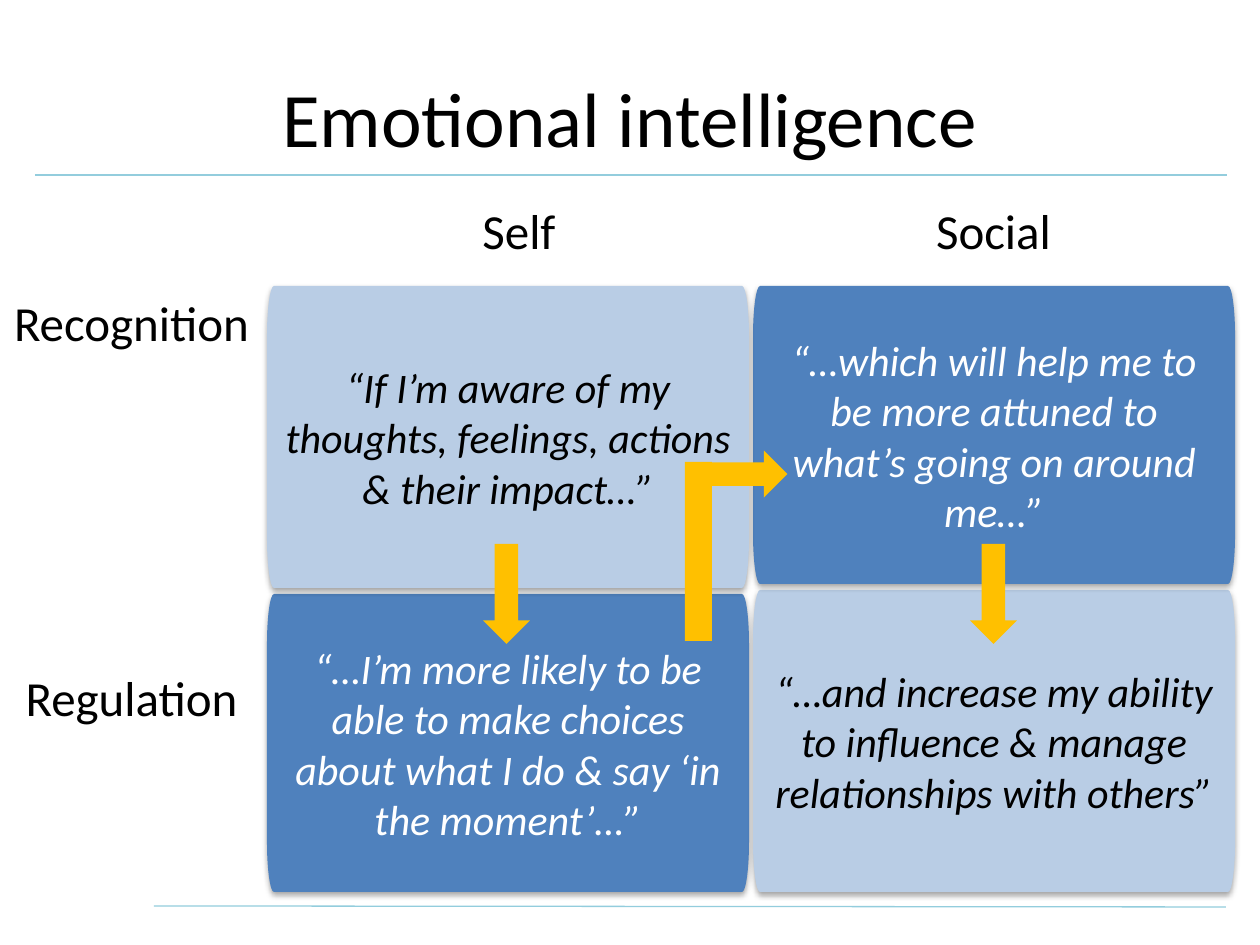
from lxml.etree import SubElement
from pptx import Presentation
from pptx.dml.color import RGBColor
from pptx.enum.shapes import MSO_CONNECTOR, MSO_SHAPE
from pptx.enum.text import MSO_ANCHOR, MSO_AUTO_SIZE, PP_ALIGN
from pptx.oxml.ns import qn
from pptx.util import Emu, Pt

SLIDE_W, SLIDE_H = 1260, 945
DARK, LIGHT, GOLD, RULE = "4F81BD", "B9CDE5", "FFC000", "93CDDD"
BLACK, WHITE = "000000", "FFFFFF"
CORNER_W, CORNER_H, BEND = 7, 50, 0.45
CELL_W = 482


def px(length):
    return Emu(round(length * 914400 / 126))


def color(value):
    return RGBColor.from_string(value)


def paint(shape, fill):
    shape.shadow.inherit = False
    shape.fill.solid()
    shape.fill.fore_color.rgb = color(fill)
    shape.line.fill.background()


def write(shape, text, size, ink, italic=False):
    frame = shape.text_frame
    frame.text = text
    frame.vertical_anchor = MSO_ANCHOR.MIDDLE
    paragraph = frame.paragraphs[0]
    paragraph.alignment = PP_ALIGN.CENTER
    font = paragraph.runs[0].font
    font.name = "Calibri"
    font.size = Pt(size)
    font.italic = italic
    font.color.rgb = color(ink)
    return frame


def add_block(slide, preset, box, fill):
    block = slide.shapes.add_shape(preset, *map(px, box))
    paint(block, fill)
    return block


def add_rule(slide, x1, y1, x2, y2):
    rule = slide.shapes.add_connector(MSO_CONNECTOR.STRAIGHT, *map(px, (x1, y1, x2, y2)))
    rule.line.color.rgb = color(RULE)
    rule.line.width = Pt(0.75)
    SubElement(rule._element.spPr, qn("a:effectLst"))


def add_title(slide, box, text):
    title = slide.shapes.title
    title.left, title.top, title.width, title.height = map(px, box)
    write(title, text, 44, BLACK)


def add_label(slide, box, text):
    label = add_block(slide, MSO_SHAPE.RECTANGLE, box, WHITE)
    frame = write(label, text, 28, BLACK)
    frame.vertical_anchor = MSO_ANCHOR.TOP
    frame.word_wrap = False
    frame.auto_size = MSO_AUTO_SIZE.SHAPE_TO_FIT_TEXT


def cell_outline(left, top, width, height):
    right, bottom = left + width, top + height
    corners = [(left, top, 1, 1), (right, top, -1, 1),
               (right, bottom, -1, -1), (left, bottom, 1, -1)]
    points = []
    for index, (x, y, inward_x, inward_y) in enumerate(corners):
        dx, dy = inward_x * CORNER_W, inward_y * CORNER_H
        curve = [(x, y + dy), (x, y + dy * BEND), (x + dx * BEND, y), (x + dx, y)]
        points += curve[::-1] if index % 2 else curve
    return [(px(x), px(y)) for x, y in points]


def bend_corners(shape):
    lines = list(shape._element.spPr.iter(qn("a:lnTo")))
    for first in range(0, len(lines), 4):
        corner = lines[first:first + 3]
        corner[0].tag = qn("a:cubicBezTo")
        for line in corner[1:]:
            corner[0].append(line[0])
            line.getparent().remove(line)


def add_soft_shadow(shape):
    effects = shape._element.spPr.find(qn("a:effectLst"))
    shadow = SubElement(effects, qn("a:outerShdw"), blurRad="40000", dist="23000",
                        dir="5400000", rotWithShape="0")
    tint = SubElement(shadow, qn("a:srgbClr"), val=BLACK)
    SubElement(tint, qn("a:alpha"), val="35000")


def add_cell(slide, box, text, fill, ink, space_after):
    start, *rest = cell_outline(*box)
    builder = slide.shapes.build_freeform(*start)
    builder.add_line_segments(rest, close=True)
    cell = builder.convert_to_shape()
    bend_corners(cell)
    paint(cell, fill)
    add_soft_shadow(cell)
    frame = write(cell, text, 24, ink, italic=True)
    frame.word_wrap = True
    frame.margin_left = frame.margin_right = px(17)
    frame.margin_top = frame.margin_bottom = px(17)
    frame.paragraphs[0].space_after = Pt(space_after)


def add_matrix(slide, left, top):
    social = left + 486
    add_cell(slide, (left, top + 308, CELL_W, 298),
             "“…I’m more likely to be able to make choices about what I do & say ‘in the moment’…”",
             DARK, WHITE, 6)
    add_cell(slide, (social, top + 304, CELL_W, 302),
             "“…and increase my ability to influence & manage relationships with others”",
             LIGHT, BLACK, 0)
    add_label(slide, (left + 202, top - 92, 100, 72), "Self")
    add_label(slide, (left - 267, top, 263, 72), "Recognition")
    add_label(slide, (left - 255, top + 375, 239, 72), "Regulation")
    add_label(slide, (social + 170, top - 92, 141, 72), "Social")
    add_cell(slide, (social, top, CELL_W, 298),
             "“…which will help me to be more attuned to what’s going on around me…”",
             DARK, WHITE, 6)
    add_cell(slide, (left, top, CELL_W, 302),
             "“If I’m aware of my thoughts, feelings, actions & their impact…”",
             LIGHT, BLACK, 6)


def add_flow(slide, left, top):
    for x in (left + 216, left + 703):
        add_block(slide, MSO_SHAPE.DOWN_ARROW, (x, top + 258, 47, 100), GOLD)
    turn = add_block(slide, MSO_SHAPE.DOWN_ARROW, (left + 447, top + 138, 47, 100), GOLD)
    turn.rotation = 270
    add_block(slide, MSO_SHAPE.RECTANGLE, (left + 418, top + 176, 27, 179), GOLD)


def main():
    deck = Presentation()
    deck.slide_width, deck.slide_height = px(SLIDE_W), px(SLIDE_H)
    slide = deck.slides.add_slide(deck.slide_layouts[5])
    add_rule(slide, 154, 906, 1226, 907)
    add_rule(slide, 35, 175, 1227, 175)
    add_title(slide, (63, 38, 1134, 158), "Emotional intelligence")
    add_matrix(slide, 267, 286)
    add_flow(slide, 267, 286)
    deck.save("out.pptx")


if __name__ == "__main__":
    main()
